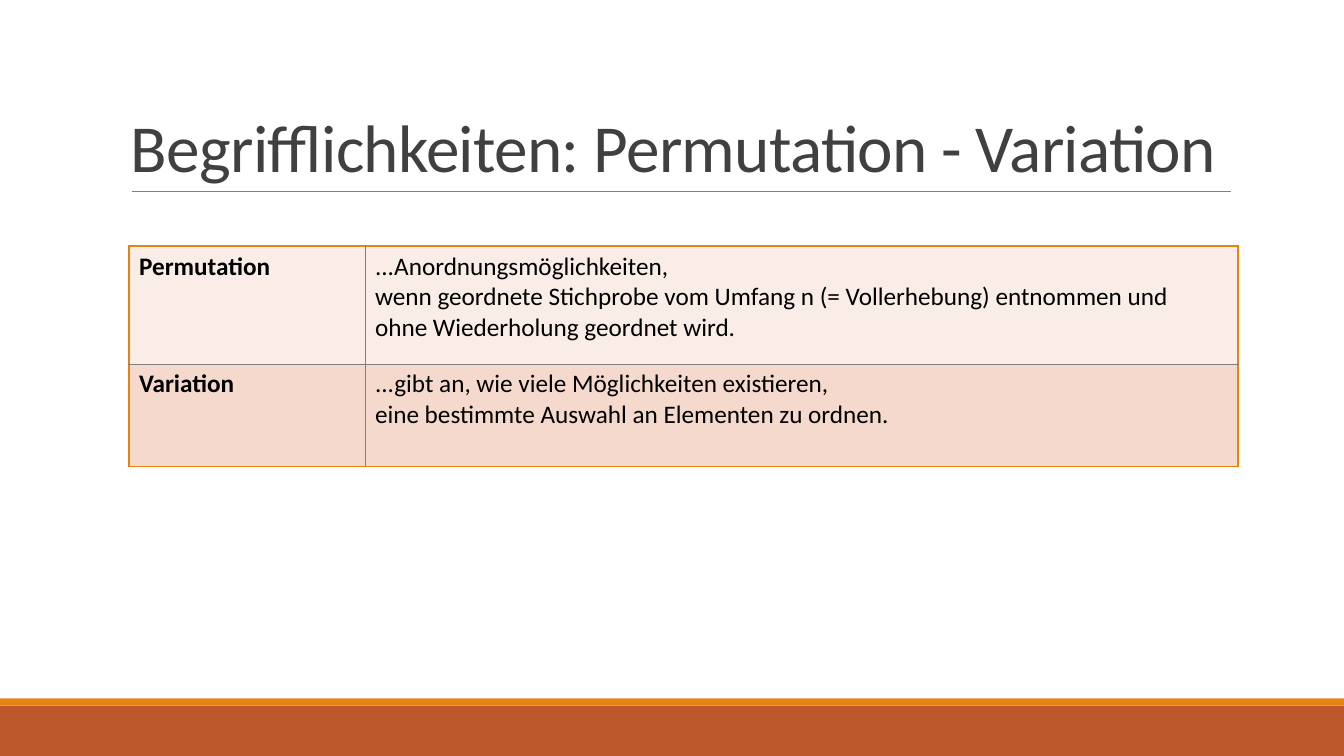
"""Build the slide that explains the terms permutation and variation."""
from dataclasses import dataclass

from lxml import etree
from pptx import Presentation
from pptx import util as u
from pptx.dml.color import RGBColor
from pptx.enum import shapes, text
from pptx.oxml import ns

ORANGE, RUST, GRAY = "E48312", "BD582C", "808080"


@dataclass
class Band:
    top: float
    height: float
    color: str


@dataclass
class Term:
    name: str
    definition: list[str]
    height: float
    color: str


BANDS = [Band(7, 0.5, RUST), Band(6.93, 0.07, ORANGE)]
TERMS = [
    Term("Permutation",
         ["...Anordnungsmöglichkeiten,",
          "wenn geordnete Stichprobe vom Umfang n (= Vollerhebung) entnommen und",
          "ohne Wiederholung geordnet wird."], 1.17, "FAEDE7"),
    Term("Variation",
         ["...gibt an, wie viele Möglichkeiten existieren,",
          "eine bestimmte Auswahl an Elementen zu ordnen."], 1.02, "F5D9CC"),
]
COLUMN_WIDTHS = [2.34, 8.66]


def rgb(color: str) -> RGBColor:
    """Turn a hex string into a colour."""
    return RGBColor.from_string(color)


def write(frame, lines: list[str], *, size: float = 18, color: str = "000000",
          bold: bool = False, line_spacing: float = 1, tracking: float = 0) -> None:
    """Fill a text frame with one paragraph per line."""
    frame.word_wrap = True
    for index, line in enumerate(lines):
        paragraph = frame.add_paragraph() if index else frame.paragraphs[0]
        paragraph.line_spacing = line_spacing
        run = paragraph.add_run()
        run.text = line
        run.font.name = "Calibri"
        run.font.size = u.Pt(size)
        run.font.bold = bold
        run.font.color.rgb = rgb(color)
        if tracking:
            run._r.get_or_add_rPr().set("spc", str(round(tracking * 100)))


def draw_band(slide, band: Band, width: int) -> None:
    """Draw a full-width band at the foot of the slide."""
    stripe = slide.shapes.add_shape(shapes.MSO_SHAPE.RECTANGLE, 0, u.Inches(band.top),
                                    width, u.Inches(band.height))
    stripe.shadow.inherit = False
    stripe.fill.solid()
    stripe.fill.fore_color.rgb = rgb(band.color)
    stripe.line.fill.background()


def draw_title(slide, title: str) -> None:
    """Write the title and the rule below it."""
    heading = slide.shapes.add_textbox(u.Inches(1.2), u.Inches(0.31),
                                       u.Inches(11), u.Inches(1.59))
    heading.text_frame.vertical_anchor = text.MSO_ANCHOR.BOTTOM
    write(heading.text_frame, [title], size=48, color="404040",
          line_spacing=0.85, tracking=-0.5)
    rule = slide.shapes.add_connector(shapes.MSO_CONNECTOR.STRAIGHT, u.Inches(1.31),
                                      u.Inches(1.9), u.Inches(12.21), u.Inches(1.9))
    rule.line.color.rgb = rgb(GRAY)
    rule.line.width = u.Pt(0.5)
    etree.SubElement(rule._element.spPr, ns.qn("a:effectLst"))


def set_border(cell, side: str, color: str, width: float) -> None:
    """Draw one side of a table cell."""
    border = etree.SubElement(cell._tc.get_or_add_tcPr(), ns.qn(f"a:ln{side}"),
                              w=str(u.Pt(width)))
    fill = etree.SubElement(border, ns.qn("a:solidFill"))
    etree.SubElement(fill, ns.qn("a:srgbClr"), val=color)


def draw_terms(slide, terms: list[Term]) -> None:
    """Draw the table of terms and definitions."""
    row_count, column_count = len(terms), len(COLUMN_WIDTHS)
    table = slide.shapes.add_table(
        row_count, column_count, u.Inches(1.28), u.Inches(2.44),
        u.Inches(sum(COLUMN_WIDTHS)), u.Inches(sum(term.height for term in terms))).table
    for column, width in zip(table.columns, COLUMN_WIDTHS):
        column.width = u.Inches(width)
    for row, term in enumerate(terms):
        table.rows[row].height = u.Inches(term.height)
        for column, lines in enumerate([[term.name], term.definition]):
            cell = table.cell(row, column)
            outer = {"L": column == 0, "R": column == column_count - 1,
                     "T": row == 0, "B": row == row_count - 1}
            for side, is_outer in outer.items():
                set_border(cell, side, ORANGE if is_outer else GRAY, 1 if is_outer else 0.5)
            cell.fill.solid()
            cell.fill.fore_color.rgb = rgb(term.color)
            write(cell.text_frame, lines, bold=column == 0)


def main() -> None:
    """Build and save the presentation."""
    deck = Presentation()
    deck.slide_width, deck.slide_height = u.Inches(13.33), u.Inches(7.5)
    slide = deck.slides.add_slide(deck.slide_layouts[6])
    for band in BANDS:
        draw_band(slide, band, deck.slide_width)
    draw_title(slide, "Begrifflichkeiten: Permutation - Variation")
    draw_terms(slide, TERMS)
    deck.save("out.pptx")


if __name__ == "__main__":
    main()
